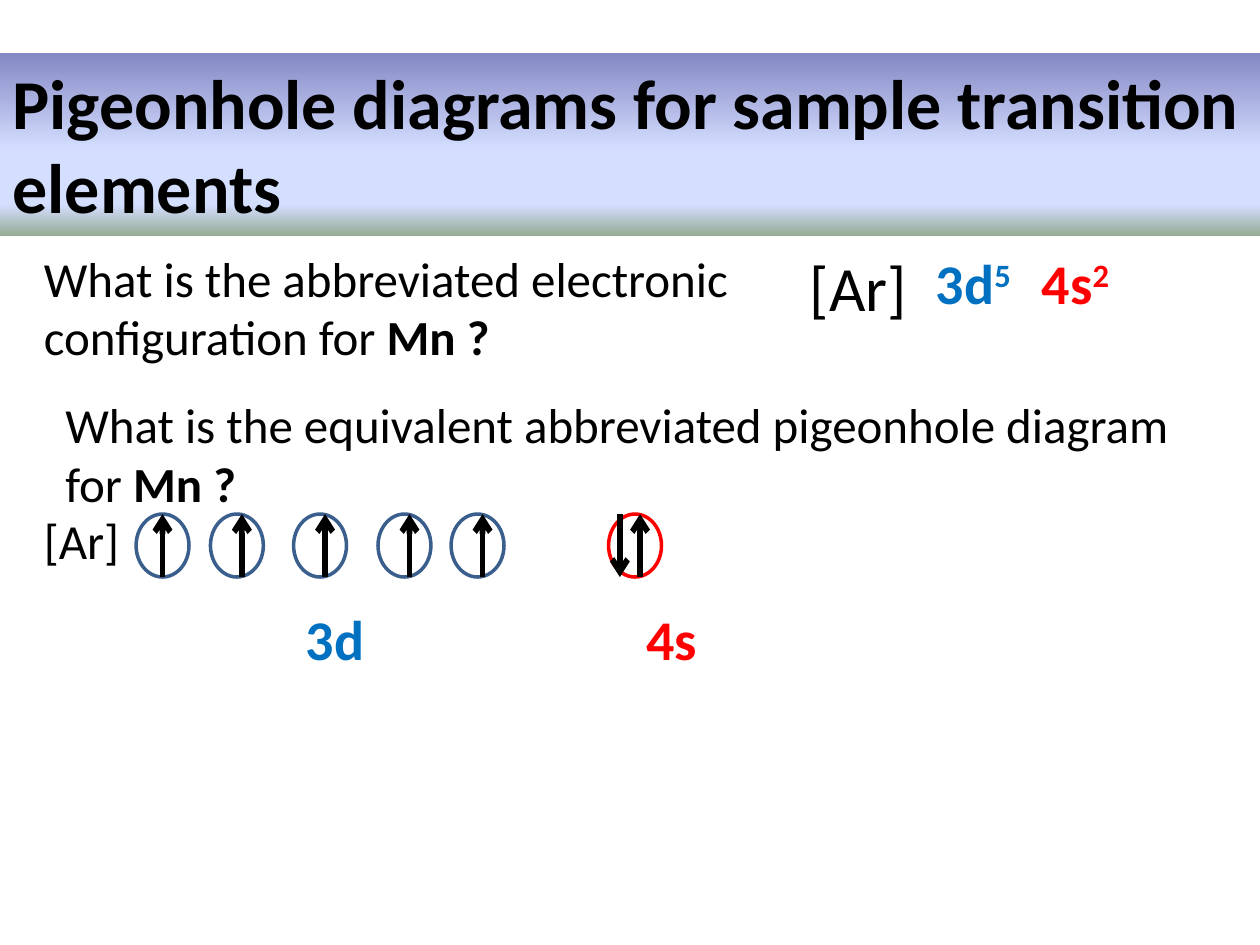
from lxml.etree import SubElement
from pptx import Presentation
from pptx.dml.color import RGBColor
from pptx.enum.shapes import MSO_CONNECTOR, MSO_SHAPE
from pptx.enum.text import MSO_ANCHOR, MSO_AUTO_SIZE, PP_ALIGN
from pptx.oxml import parse_xml
from pptx.oxml.ns import nsdecls, qn
from pptx.util import Inches, Pt

BLACK, BLUE, RED, OUTLINE = "000000", "0070C0", "FF0000", "3A5F8C"
BAND_STOPS = [(0, "8488C4"), (53, "D4DEFF"), (83, "D4DEFF"), (100, "96AB94")]
ROW_TOP, ORBITAL_W, ORBITAL_H = 4.08, 0.42, 0.5


def rgb(value):
    return RGBColor.from_string(value)


class SlideBuilder:
    font = "Calibri"

    def __init__(self, slide):
        self.slide = slide

    def add_runs(self, tf, runs, size):
        tf.word_wrap = True
        tf.auto_size = MSO_AUTO_SIZE.SHAPE_TO_FIT_TEXT
        tf.vertical_anchor = MSO_ANCHOR.TOP
        p = tf.paragraphs[0]
        p.alignment = PP_ALIGN.LEFT
        for text, color, bold, baseline in runs:
            r = p.add_run()
            r.text = text
            r.font.name = self.font
            r.font.size = Pt(size)
            r.font.bold = bold
            r.font.color.rgb = rgb(color)
            if baseline:
                r._r.get_or_add_rPr().set("baseline", str(baseline * 1000))
        return p

    def title(self, x, y, w, h, text, size, stops):
        sp = self.slide.shapes.title
        sp.left, sp.top, sp.width, sp.height = map(Inches, (x, y, w, h))
        gs = "".join(
            f'<a:gs pos="{pos * 1000}"><a:srgbClr val="{color}"/></a:gs>'
            for pos, color in stops
        )
        sp._element.spPr.append(parse_xml(
            f'<a:gradFill {nsdecls("a")} rotWithShape="1"><a:gsLst>{gs}</a:gsLst>'
            '<a:lin ang="5400000" scaled="0"/></a:gradFill>'
        ))
        self.add_runs(sp.text_frame, [(text, BLACK, True, 0)], size)

    def text(self, x, y, w, h, runs, size, tabs=()):
        sp = self.slide.shapes.add_textbox(*map(Inches, (x, y, w, h)))
        p = self.add_runs(sp.text_frame, runs, size)
        if tabs:
            tab_list = SubElement(p._p.get_or_add_pPr(), qn("a:tabLst"))
            for pos in tabs:
                SubElement(tab_list, qn("a:tab"), pos=str(Inches(pos)), algn="l")

    def orbital(self, x, color):
        sp = self.slide.shapes.add_shape(
            MSO_SHAPE.OVAL, *map(Inches, (x, ROW_TOP, ORBITAL_W, ORBITAL_H))
        )
        sp.shadow.inherit = False
        sp.fill.background()
        sp.line.color.rgb = rgb(color)
        sp.line.width = Pt(2)

    def electron(self, x, up=True):
        ends = [ROW_TOP, ROW_TOP + ORBITAL_H]
        if up:
            ends.reverse()
        cxn = self.slide.shapes.add_connector(
            MSO_CONNECTOR.STRAIGHT, *map(Inches, (x, ends[0], x, ends[1]))
        )
        cxn.line.color.rgb = rgb(BLACK)
        cxn.line.width = Pt(3.25)
        SubElement(cxn.line._get_or_add_ln(), qn("a:tailEnd"), type="arrow")
        SubElement(cxn._element.spPr, qn("a:effectLst"))


def main():
    prs = Presentation()
    prs.slide_width, prs.slide_height = Inches(10), Inches(7.5)
    s = SlideBuilder(prs.slides.add_slide(prs.slide_layouts[5]))

    s.title(0, 0.42, 10, 1.45,
            "Pigeonhole diagrams for sample transition elements", 40, BAND_STOPS)

    element = ("Mn ?", BLACK, True, 0)
    core = [("[Ar]", BLACK, False, 0)]
    s.text(0.25, 1.92, 6.33, 1.04, [
        ("What is the abbreviated electronic configuration for ", BLACK, False, 0),
        element], 28)
    s.text(6.33, 1.92, 1.17, 0.71, core, 36)
    for x, subshell, count, color in [(7.33, "3d", "5", BLUE), (8.17, "4s", "2", RED)]:
        s.text(x, 1.92, 0.83, 0.64,
               [(subshell, color, True, 0), (count, color, True, 30)], 32)

    s.text(0.42, 3.08, 9.42, 1.04, [
        ("What is the equivalent abbreviated pigeonhole diagram for ", BLACK, False, 0),
        element], 28)
    s.text(0.25, 4, 0.83, 0.57, core, 28)
    s.text(1.33, 4.75, 5.83, 0.64,
           [("\t3d", BLUE, True, 0), ("\t4s", RED, True, 0)], 32, tabs=(1, 3.7))

    for x, arrow_x in [(1.08, 1.29), (1.67, 1.92), (2.33, 2.58), (3, 3.25), (3.58, 3.83)]:
        s.orbital(x, OUTLINE)
        s.electron(arrow_x)
    s.orbital(4.83, RED)
    s.electron(5.08)
    s.electron(4.92, up=False)

    prs.save("out.pptx")


if __name__ == "__main__":
    main()
